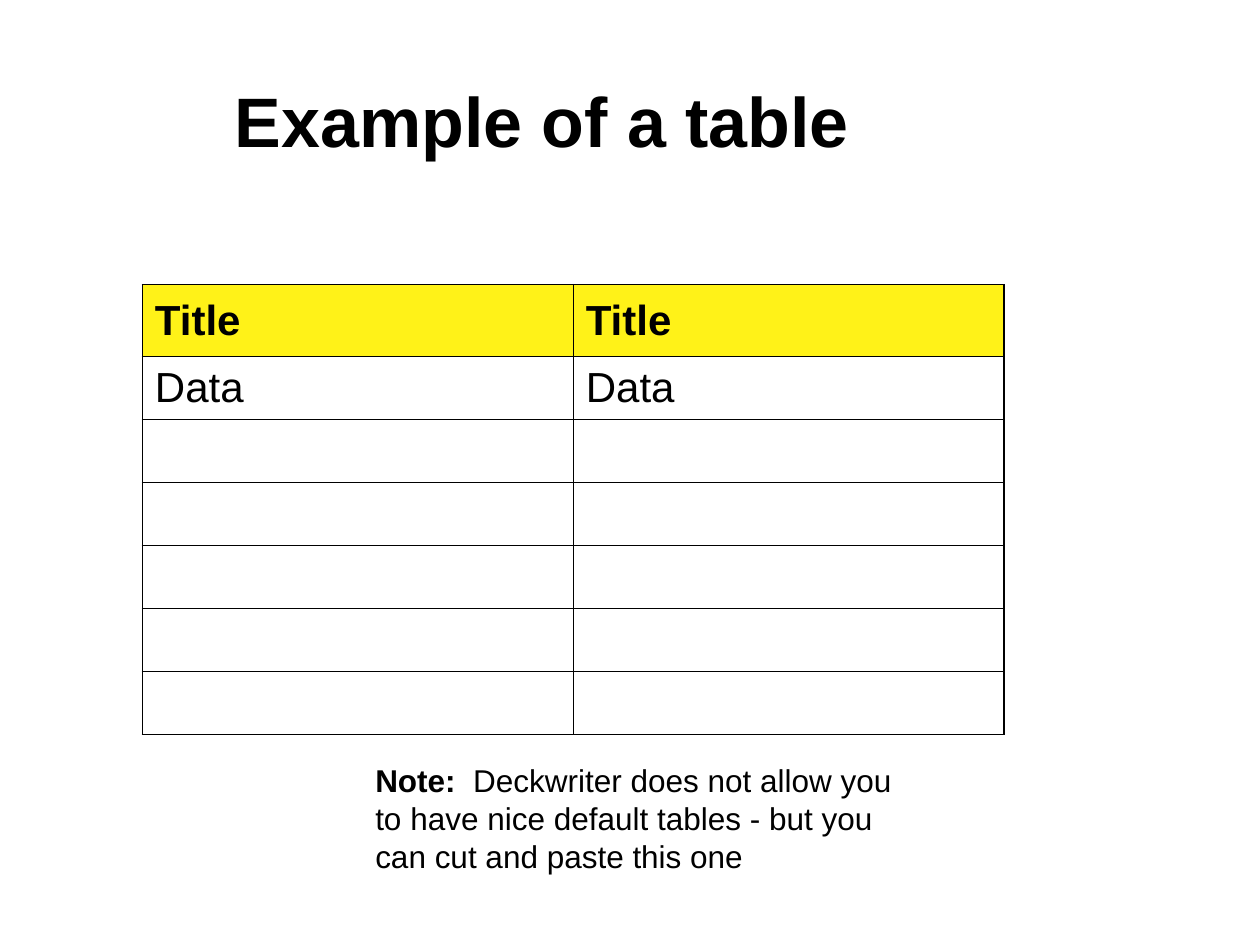
from dataclasses import dataclass
from lxml.etree import SubElement as Sub
from pptx import Presentation
from pptx.dml.color import RGBColor as RGB
from pptx.enum.text import MSO_ANCHOR as Anchor, MSO_AUTO_SIZE as Fit, PP_ALIGN as Align
from pptx.oxml.ns import qn
from pptx.util import Inches, Pt


@dataclass
class Theme:
    face: str = "Arial"
    ink: str = "000000"
    head: str = "FFF218"
    title: int = 40
    cell: int = 24
    note: int = 18
    rule: int = 1


look = Theme()


def add_run(para, text, size, bold=False):
    run = para.add_run()
    run.text = text
    font = run.font
    font.name, font.size, font.bold = look.face, Pt(size), bold
    font.color.rgb = RGB.from_string(look.ink)


def add_rules(cell):
    props = cell._tc.get_or_add_tcPr()
    for side in ("lnL", "lnR", "lnT", "lnB"):
        line = Sub(props, qn(f"a:{side}"), w=str(Pt(look.rule)))
        fill = Sub(line, qn("a:solidFill"))
        Sub(fill, qn("a:srgbClr"), val=look.ink)


deck = Presentation()
deck.slide_width, deck.slide_height = Inches(10), Inches(7.5)
slide = deck.slides.add_slide(deck.slide_layouts[5])

title = slide.shapes.title
title.left, title.top = Inches(0.5), Inches(0.28)
title.width, title.height = Inches(7.6), Inches(1.34)
frame = title.text_frame
frame.vertical_anchor = Anchor.MIDDLE
para = frame.paragraphs[0]
para.alignment = Align.CENTER
add_run(para, "Example of a table", look.title, True)

rows = [["Title"] * 2, ["Data"] * 2] + [[""] * 2] * 5
tall = [Inches(0.57)] + [Inches(0.5)] * (len(rows) - 1)
wide = Inches(3.42)
table = slide.shapes.add_table(
    len(rows), 2, Inches(1.13), Inches(2.26), wide * 2, sum(tall)
).table
table.first_row = table.horz_banding = False
for col in table.columns:
    col.width = wide
for r, texts in enumerate(rows):
    table.rows[r].height = tall[r]
    for c, text in enumerate(texts):
        cell = table.cell(r, c)
        cell.vertical_anchor = Anchor.MIDDLE
        add_rules(cell)
        if r == 0:
            cell.fill.solid()
            cell.fill.fore_color.rgb = RGB.from_string(look.head)
        else:
            cell.fill.background()
        if text:
            add_run(cell.text_frame.paragraphs[0], text, look.cell, r == 0)

note = slide.shapes.add_textbox(Inches(2.88), Inches(5.99), Inches(4.49), Inches(1))
frame = note.text_frame
frame.word_wrap = True
frame.auto_size = Fit.SHAPE_TO_FIT_TEXT
para = frame.paragraphs[0]
add_run(para, "Note:  ", look.note, True)
add_run(
    para,
    "Deckwriter does not allow you to have nice default tables"
    " - but you can cut and paste this one",
    look.note,
)

deck.save("out.pptx")
